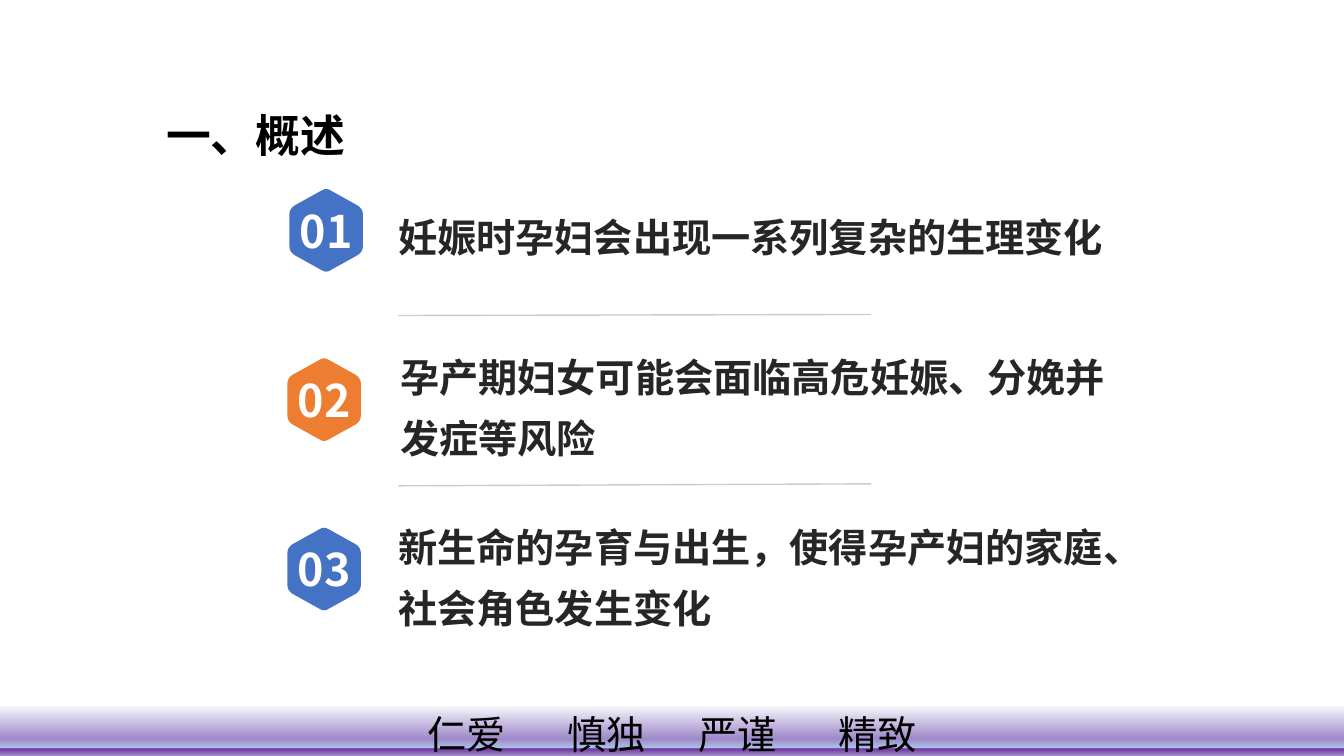
import pptx
from lxml import etree
from pptx.dml.color import RGBColor
from pptx.enum.shapes import MSO_CONNECTOR, MSO_SHAPE
from pptx.enum.text import MSO_ANCHOR, PP_ALIGN
from pptx.oxml.ns import qn
from pptx.util import Inches, Pt

FONT = "Noto Sans CJK SC"
BLACK = RGBColor(0x00, 0x00, 0x00)
WHITE = RGBColor(0xFF, 0xFF, 0xFF)
DARK = RGBColor(0x26, 0x26, 0x26)
GREY = RGBColor(0xCC, 0xCC, 0xCC)
BLUE = RGBColor(0x44, 0x72, 0xC4)
ORANGE = RGBColor(0xED, 0x7D, 0x31)

HEADING = "一、概述"
# number, badge colour, badge left, text left, text width, text
POINTS = [
    ("01", BLUE, 2.87, 3.95, 7.5, "妊娠时孕妇会出现一系列复杂的生理变化"),
    ("02", ORANGE, 2.85, 3.97, 7.13, "孕产期妇女可能会面临高危妊娠、分娩并发症等风险"),
    ("03", BLUE, 2.85, 3.95, 7.32, "新生命的孕育与出生，使得孕产妇的家庭、社会角色发生变化"),
]
# right end y, left end y
DIVIDERS = [(3.12, 3.13), (4.8, 4.82)]
DIVIDER_RIGHT, DIVIDER_LEFT = 8.64, 3.95
MOTTO = ["仁爱", "慎独", "严谨", "精致"]
MOTTO_LEFTS = [4.24, 5.63, 6.93, 8.32]
BAND_STOPS = [
    (0, "F6F8FC"), (58, "9F89C9"), (74, "ABC0E4"), (75, "7030A0"), (93, "B7B5DE"),
    (96, "C3CBE8"), (98, "C9D6ED"), (99, "CDDFF1"), (99, "CCDCF0"), (100, "C7D5ED"),
]

FIRST_BADGE_TOP, BADGE_STEP = 1.88, 1.68
FIRST_TEXT_TOP, TEXT_STEP = 1.57, 1.69
TEXT_HEIGHT = 1.42
BADGE_WIDTH, BADGE_HEIGHT = 0.73, 0.81
# Bezier control points of two rounded corners; the others are mirrored
UPPER_LEFT = [(0, 0.25), (0, 0.21), (0.02, 0.18), (0.05, 0.16)]
TOP = [(0.32, 0.01), (0.35, -0.01), (0.38, -0.01), (0.41, 0.01)]


def mirror_x(corner):
    return [(BADGE_WIDTH - x, y) for x, y in reversed(corner)]


def mirror_y(corner):
    return [(x, BADGE_HEIGHT - y) for x, y in reversed(corner)]


def write(shape, text, size, color, bold=True, inset_x=0, inset_y=0, line_spacing=1.0,
          align=PP_ALIGN.LEFT, anchor=MSO_ANCHOR.MIDDLE, wrap=True, tabs=()):
    frame = shape.text_frame
    frame_format = {
        "word_wrap": wrap, "vertical_anchor": anchor,
        "margin_left": Inches(inset_x), "margin_right": Inches(inset_x),
        "margin_top": Inches(inset_y), "margin_bottom": Inches(inset_y),
    }
    for key, value in frame_format.items():
        setattr(frame, key, value)
    paragraph = frame.paragraphs[0]
    paragraph.alignment = align
    paragraph.line_spacing = line_spacing
    if tabs:
        tab_list = etree.SubElement(paragraph._p.get_or_add_pPr(), qn("a:tabLst"))
        for position in tabs:
            etree.SubElement(tab_list, qn("a:tab"), pos=str(Inches(position)), algn="l")
    run = paragraph.add_run()
    run.text = text
    for key, value in {"name": FONT, "size": Pt(size), "bold": bold}.items():
        setattr(run.font, key, value)
    run.font.color.rgb = color
    etree.SubElement(run._r.get_or_add_rPr(), qn("a:ea"), typeface=FONT)


def add_text(slide, left, top, width, height, text, size, color, **options):
    box = slide.shapes.add_textbox(*map(Inches, (left, top, width, height)))
    write(box, text, size, color, **options)


def add_band(slide):
    """Gradient footer band with the four motto words."""
    band = slide.shapes.add_shape(MSO_SHAPE.RECTANGLE, 0, Inches(7), Inches(13.33), Inches(0.57))
    band.shadow.inherit = False
    band.line.fill.background()
    band.fill.gradient()
    band.fill.gradient_angle = 270
    stops = band._element.spPr.find(".//" + qn("a:gsLst"))
    for stop in list(stops):
        stops.remove(stop)
    for percent, color in BAND_STOPS:
        stop = etree.SubElement(stops, qn("a:gs"), pos=str(percent * 1000))
        etree.SubElement(stop, qn("a:srgbClr"), val=color)
    first = MOTTO_LEFTS[0]
    write(band, "\t".join(MOTTO), 28, BLACK, bold=False,
          tabs=[left - first for left in MOTTO_LEFTS[1:]])
    band.text_frame.margin_left = Inches(first)


def add_segment(outline, tag, points):
    segment = etree.SubElement(outline, qn(tag))
    for x, y in points:
        etree.SubElement(segment, qn("a:pt"), x=str(Inches(x)), y=str(Inches(y)))


def add_badge(slide, left, top, number, color):
    """Rounded hexagon holding a number."""
    right, bottom = left + BADGE_WIDTH, top + BADGE_HEIGHT
    bounds = [tuple(map(Inches, point))
              for point in ((left, top), (right, top), (right, bottom), (left, bottom))]
    builder = slide.shapes.build_freeform(*bounds[0])
    builder.add_line_segments(bounds[1:], close=True)
    badge = builder.convert_to_shape()

    # Swap the bounding rectangle for the curved outline
    outline = badge._element.spPr.find(".//" + qn("a:path"))
    for segment in list(outline):
        outline.remove(segment)
    upper_right, lower_left = mirror_x(UPPER_LEFT), mirror_y(UPPER_LEFT)
    corners = [UPPER_LEFT, TOP, upper_right, mirror_y(upper_right), mirror_y(TOP), lower_left]
    for index, corner in enumerate(corners):
        add_segment(outline, "a:lnTo" if index else "a:moveTo", corner[:1])
        add_segment(outline, "a:cubicBezTo", corner[1:])
    etree.SubElement(outline, qn("a:close"))

    badge.shadow.inherit = False
    badge.fill.solid()
    badge.fill.fore_color.rgb = color
    badge.line.fill.background()
    write(badge, number, 32, WHITE, align=PP_ALIGN.CENTER, wrap=False)


def add_divider(slide, right_y, left_y):
    ends = map(Inches, (DIVIDER_RIGHT, right_y, DIVIDER_LEFT, left_y))
    divider = slide.shapes.add_connector(MSO_CONNECTOR.STRAIGHT, *ends)
    divider.line.color.rgb = GREY
    divider.line.width = Pt(1)
    etree.SubElement(divider._element.spPr, qn("a:effectLst"))


def main():
    deck = pptx.Presentation()
    deck.slide_width, deck.slide_height = Inches(13.33), Inches(7.5)
    slide = deck.slides.add_slide(deck.slide_layouts[6])
    add_band(slide)
    add_text(slide, 1.55, 1.08, 8.93, 0.58, HEADING, 32, BLACK, inset_x=0.1,
             inset_y=0.05, line_spacing=0.9, anchor=MSO_ANCHOR.BOTTOM)
    for row, (number, color, badge_left, text_left, width, text) in enumerate(POINTS):
        add_badge(slide, badge_left, FIRST_BADGE_TOP + row * BADGE_STEP, number, color)
        add_text(slide, text_left, FIRST_TEXT_TOP + row * TEXT_STEP, width, TEXT_HEIGHT,
                 text, 28, DARK, line_spacing=1.3)
    for right_y, left_y in DIVIDERS:
        add_divider(slide, right_y, left_y)
    deck.save("out.pptx")


if __name__ == "__main__":
    main()
